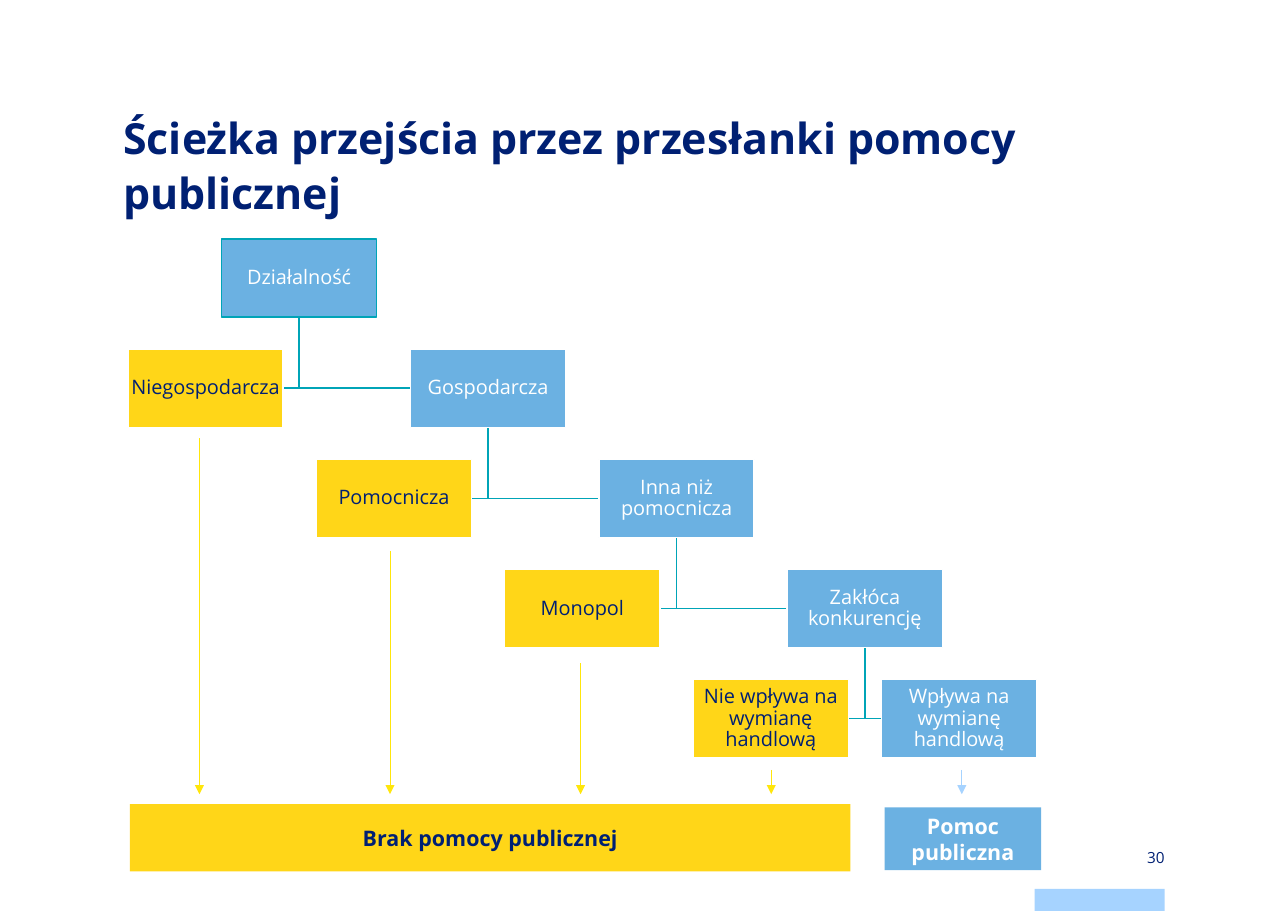
import pptx
import pptx.dml.color
import pptx.enum.shapes
import pptx.enum.text
import pptx.oxml.ns
import pptx.util
from lxml import etree

Inches = pptx.util.Inches
Pt = pptx.util.Pt
ALIGN = pptx.enum.text.PP_ALIGN
ANCHOR = pptx.enum.text.MSO_ANCHOR
qn = pptx.oxml.ns.qn

FONT = "Open Sans"
COLOURS = {
    "navy": "002073",
    "yellow": "FFD618",
    "blue": "6BB1E2",
    "teal": "00A4B7",
    "white": "FFFFFF",
    "pale": "A6D3FF",
    "lemon": "FFE60B",
}
TEXT_ON = {"yellow": "navy", "blue": "white"}
NODE_WIDTH, NODE_HEIGHT = 1.41, 0.71
COLUMN_STEP, ROW_STEP = 1.71, 1
ROOT_LEFT, ROOT_TOP = 2.01, 2.17
FIRST_NO_LEFT = 1.16
STEPS = [
    ("Niegospodarcza", "Gospodarcza", 1.5),
    ("Pomocnicza", "Inna niż pomocnicza", 1.5),
    ("Monopol", "Zakłóca konkurencję", 1.5),
    ("Nie wpływa na wymianę handlową", "Wpływa na wymianę handlową", 1),
]
ARROWS = [
    (3.98, "lemon"),
    (5, "lemon"),
    (6.02, "lemon"),
    (6.99, "lemon"),
    (6.99, "pale"),
]


def rgb(name):
    """Return the named colour."""
    return pptx.dml.color.RGBColor.from_string(COLOURS[name])


def write(frame, text, size, colour, align, bold=False, spacing=None):
    """Put one formatted run in the frame."""
    frame.word_wrap = True
    paragraph = frame.paragraphs[0]
    paragraph.alignment = align
    if spacing is not None:
        paragraph.line_spacing = spacing
    run = paragraph.add_run()
    run.text = text
    run.font.name = FONT
    run.font.size = Pt(size)
    run.font.bold = bold
    run.font.color.rgb = rgb(colour)


def set_margins(frame, across, down):
    """Set the side and the top and bottom margins of a frame."""
    frame.margin_left = frame.margin_right = Inches(across)
    frame.margin_top = frame.margin_bottom = Inches(down)


def add_box(slide, left, top, width, height, fill, border=None):
    """Add a filled rectangle."""
    box = slide.shapes.add_shape(
        pptx.enum.shapes.MSO_SHAPE.RECTANGLE,
        Inches(left), Inches(top), Inches(width), Inches(height))
    box.shadow.inherit = False
    box.fill.solid()
    box.fill.fore_color.rgb = rgb(fill)
    if border:
        box.line.color.rgb = rgb(border)
        box.line.width = Pt(1)
    else:
        box.line.fill.background()
    return box


def add_node(slide, text, left, top, fill, border="white"):
    """Add one labelled box of the decision path."""
    node = add_box(slide, left, top, NODE_WIDTH, NODE_HEIGHT, fill, border)
    frame = node.text_frame
    set_margins(frame, 0.01, 0.01)
    frame.vertical_anchor = ANCHOR.MIDDLE
    write(frame, text, 13, TEXT_ON[fill], ALIGN.CENTER, spacing=0.9)


def add_result(slide, text, left, top, width, height, fill):
    """Add an outcome bar with bold text."""
    frame = add_box(slide, left, top, width, height, fill).text_frame
    set_margins(frame, 0.1, 0)
    frame.vertical_anchor = ANCHOR.MIDDLE
    write(frame, text, 14, TEXT_ON[fill], ALIGN.CENTER, bold=True)


def add_elbow(slide, x, top, bottom, end):
    """Draw a line down from a box and sideways to the next one."""
    builder = slide.shapes.build_freeform(Inches(x), Inches(top))
    builder.add_line_segments(
        [(Inches(x), Inches(bottom)), (Inches(end), Inches(bottom))],
        close=False)
    elbow = builder.convert_to_shape()
    elbow.shadow.inherit = False
    elbow.fill.background()
    elbow.line.color.rgb = rgb("teal")
    elbow.line.width = Pt(1)


def add_arrow(slide, x, top, bottom, colour):
    """Draw a downward arrow."""
    arrow = slide.shapes.add_connector(
        pptx.enum.shapes.MSO_CONNECTOR.STRAIGHT,
        Inches(x), Inches(top), Inches(x), Inches(bottom))
    arrow.line.color.rgb = rgb(colour)
    arrow.line.width = Pt(0.5)
    etree.SubElement(arrow.line._get_or_add_ln(), qn("a:tailEnd"), type="triangle")
    etree.SubElement(arrow._element.spPr, qn("a:effectLst"))


def add_title(slide, text):
    """Place and fill the title."""
    title = slide.shapes.title
    title.left, title.top = Inches(1.12), Inches(0.98)
    title.width, title.height = Inches(9.45), Inches(1.18)
    frame = title.text_frame
    set_margins(frame, 0, 0)
    frame.vertical_anchor = ANCHOR.TOP
    write(frame, text, 28, "navy", ALIGN.LEFT, bold=True, spacing=Pt(36))


def add_page_number(slide, number):
    """Add the page number and the band beneath it."""
    add_box(slide, 9.39, 8.07, 1.18, 0.2, "pale")
    page = slide.shapes.add_textbox(
        Inches(9.39), Inches(7.68), Inches(1.18), Inches(0.2))
    set_margins(page.text_frame, 0, 0)
    page.text_frame.vertical_anchor = ANCHOR.MIDDLE
    write(page.text_frame, number, 10, "navy", ALIGN.RIGHT)


def add_decision_path(slide):
    """Add the staircase of yes and no boxes."""
    nodes = [("Działalność", ROOT_LEFT, ROOT_TOP, "blue", "teal")]
    parent_left = ROOT_LEFT
    for row, (no_text, yes_text, gap) in enumerate(STEPS):
        no_left = FIRST_NO_LEFT + row * COLUMN_STEP
        yes_left = no_left + gap * COLUMN_STEP
        parent_bottom = ROOT_TOP + row * ROW_STEP + NODE_HEIGHT
        top = ROOT_TOP + (row + 1) * ROW_STEP
        for end in (yes_left, no_left + NODE_WIDTH):
            add_elbow(slide, parent_left + NODE_WIDTH / 2, parent_bottom,
                      top + NODE_HEIGHT / 2, end)
        nodes.append((no_text, no_left, top, "yellow"))
        nodes.append((yes_text, yes_left, top, "blue"))
        parent_left = yes_left
    for node in nodes:
        add_node(slide, *node)


def main():
    """Build the slide and save it."""
    deck = pptx.Presentation()
    deck.slide_width, deck.slide_height = Inches(11.69), Inches(8.27)
    slide = deck.slides.add_slide(deck.slide_layouts.get_by_name("Title Only"))
    add_title(slide, "Ścieżka przejścia przez przesłanki pomocy publicznej")
    add_page_number(slide, "30")
    add_decision_path(slide)
    add_result(slide, "Brak pomocy publicznej", 1.18, 7.3, 6.54, 0.61, "yellow")
    add_result(slide, "Pomoc publiczna", 8.03, 7.33, 1.42, 0.57, "blue")
    for column, (top, colour) in enumerate(ARROWS):
        add_arrow(slide, 1.81 + column * 1.73, top, 7.21, colour)
    deck.save("out.pptx")


if __name__ == "__main__":
    main()
